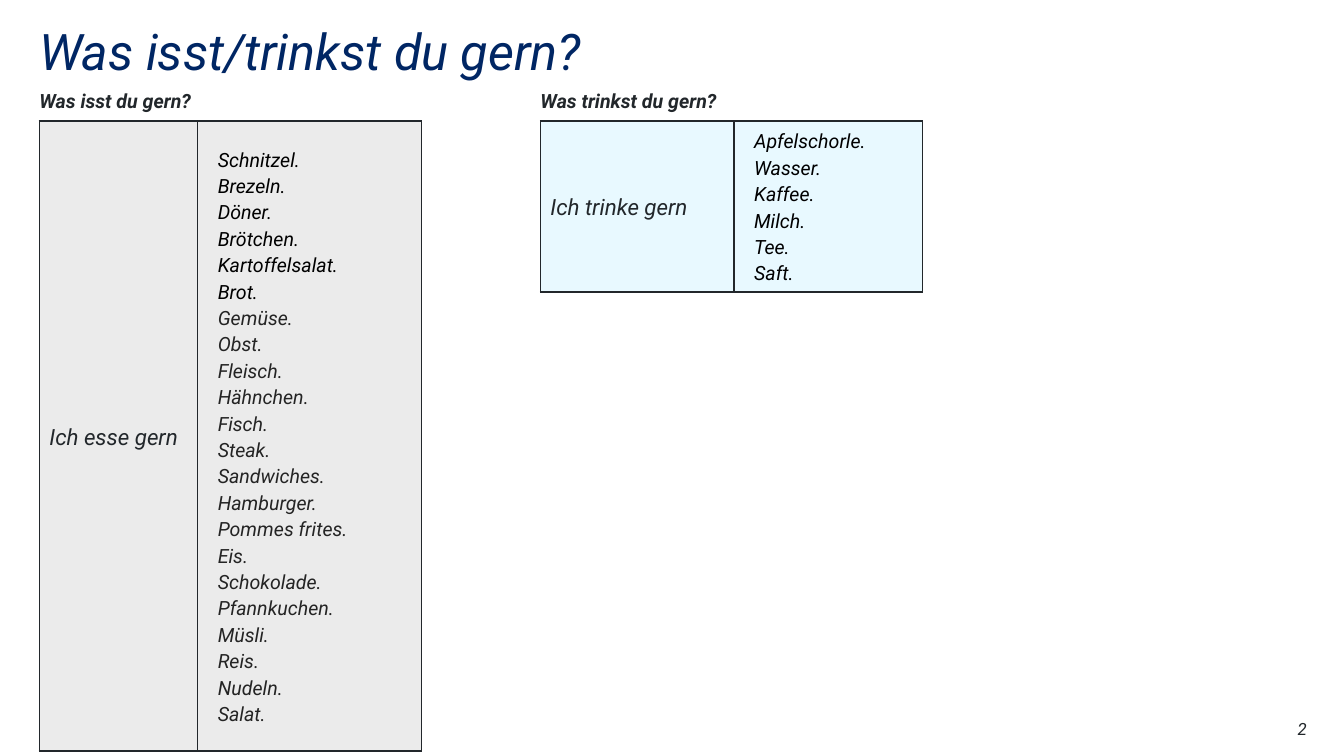
from lxml import etree
from pptx import Presentation
from pptx.dml.color import RGBColor
from pptx.enum.text import MSO_ANCHOR, PP_ALIGN
from pptx.oxml.ns import qn
from pptx.util import Inches, Pt

TOP, MIDDLE = MSO_ANCHOR.TOP, MSO_ANCHOR.MIDDLE
LEFT, RIGHT = PP_ALIGN.LEFT, PP_ALIGN.RIGHT

FONT = "Roboto"
NAVY = RGBColor(0x00, 0x26, 0x64)
INK = RGBColor(0x22, 0x27, 0x2B)
BLACK = RGBColor(0x00, 0x00, 0x00)
CHARCOAL = RGBColor(0x24, 0x24, 0x24)
GREY = RGBColor(0xEB, 0xEB, 0xEB)
PALE_BLUE = RGBColor(0xE8, 0xF9, 0xFF)

FOODS = ["Schnitzel.", "Brezeln.", "Döner.", "Brötchen.", "Kartoffelsalat.", "Brot."]
MORE_FOODS = [
    "Gemüse.", "Obst.", "Fleisch.", "Hähnchen.", "Fisch.", "Steak.",
    "Sandwiches.", "Hamburger.", "Pommes frites.", "Eis.", "Schokolade.",
    "Pfannkuchen.", "Müsli.", "Reis.", "Nudeln.", "Salat.",
]
DRINKS = ["Apfelschorle.", "Wasser.", "Kaffee.", "Milch.", "Tee.", "Saft."]


def add_run(p, text, size, color, bold=False):
    r = p.add_run()
    r.text = text
    r.font.name = FONT
    r.font.size = Pt(size)
    r.font.bold = bold
    r.font.italic = True
    r.font.color.rgb = color


def set_frame(tf):
    """Wrap text from the top of a frame without insets."""
    tf.word_wrap = True
    tf.vertical_anchor = TOP
    tf.margin_left = tf.margin_right = tf.margin_top = tf.margin_bottom = 0


def add_title(s, text):
    title = s.shapes.title
    title.left, title.top = Inches(0.39), Inches(0.27)
    title.width, title.height = Inches(11.02), Inches(1.1)
    set_frame(title.text_frame)
    p = title.text_frame.paragraphs[0]
    p.alignment = LEFT
    p.line_spacing = 0.9
    add_run(p, text, 36, NAVY)


def add_label(s, box, text, size, bold=False, align=LEFT):
    tf = s.shapes.add_textbox(*map(Inches, box)).text_frame
    set_frame(tf)
    p = tf.paragraphs[0]
    p.alignment = align
    add_run(p, text, size, INK, bold)


def set_borders(cell):
    tc_pr = cell._tc.get_or_add_tcPr()
    for side in ("a:lnL", "a:lnR", "a:lnT", "a:lnB"):
        ln = etree.SubElement(tc_pr, qn(side), w=str(Pt(1)))
        fill = etree.SubElement(ln, qn("a:solidFill"))
        etree.SubElement(fill, qn("a:srgbClr"), val=str(INK))


def fill_cell(cell, lines, size, fill, indent=0):
    """Write (text, colour) lines as paragraphs of a bordered cell."""
    set_borders(cell)
    cell.fill.solid()
    cell.fill.fore_color.rgb = fill
    cell.vertical_anchor = MIDDLE
    cell.margin_left = cell.margin_right = Inches(0.1)
    cell.margin_top = cell.margin_bottom = Inches(0.05)
    tf = cell.text_frame
    for i, (text, color) in enumerate(lines):
        p = tf.add_paragraph() if i else tf.paragraphs[0]
        p.line_spacing = 1.14
        p_pr = p._p.get_or_add_pPr()
        p_pr.set("marL", str(Inches(indent)))
        p_pr.set("indent", "0")
        add_run(p, text, size, color)


def add_phrase_table(s, left, height, widths, starter, answers, fill):
    frame = s.shapes.add_table(
        1, 2, Inches(left), Inches(1.2), Inches(sum(widths)), Inches(height))
    table = frame.table
    table.first_row = table.horz_banding = False
    for column, width in zip(table.columns, widths):
        column.width = Inches(width)
    fill_cell(table.cell(0, 0), [(starter, INK)], 16, fill)
    fill_cell(table.cell(0, 1), answers, 14, fill, indent=0.1)


def main():
    prs = Presentation()
    prs.slide_width, prs.slide_height = Inches(13.33), Inches(7.5)
    s = prs.slides.add_slide(prs.slide_layouts[5])
    add_title(s, "Was isst/trinkst du gern?")

    foods = [(f, BLACK) for f in FOODS] + [(f, CHARCOAL) for f in MORE_FOODS]
    drinks = [(d, BLACK) for d in DRINKS]
    add_label(s, (0.39, 0.88, 1.91, 0.24), "Was isst\u00a0du gern?".replace("\u00a0", " "), 14, bold=True)
    add_phrase_table(s, 0.39, 6.25, (1.57, 2.22), "Ich esse gern", foods, GREY)
    add_label(s, (5.36, 0.88, 3.39, 0.24), "Was trinkst du gern?", 14, bold=True)
    add_phrase_table(s, 5.36, 1.65, (1.92, 1.87), "Ich trinke gern", drinks, PALE_BLUE)

    add_label(s, (12.17, 7.13, 0.79, 0.2), "2", 12, align=RIGHT)
    prs.save("out.pptx")


if __name__ == "__main__":
    main()
